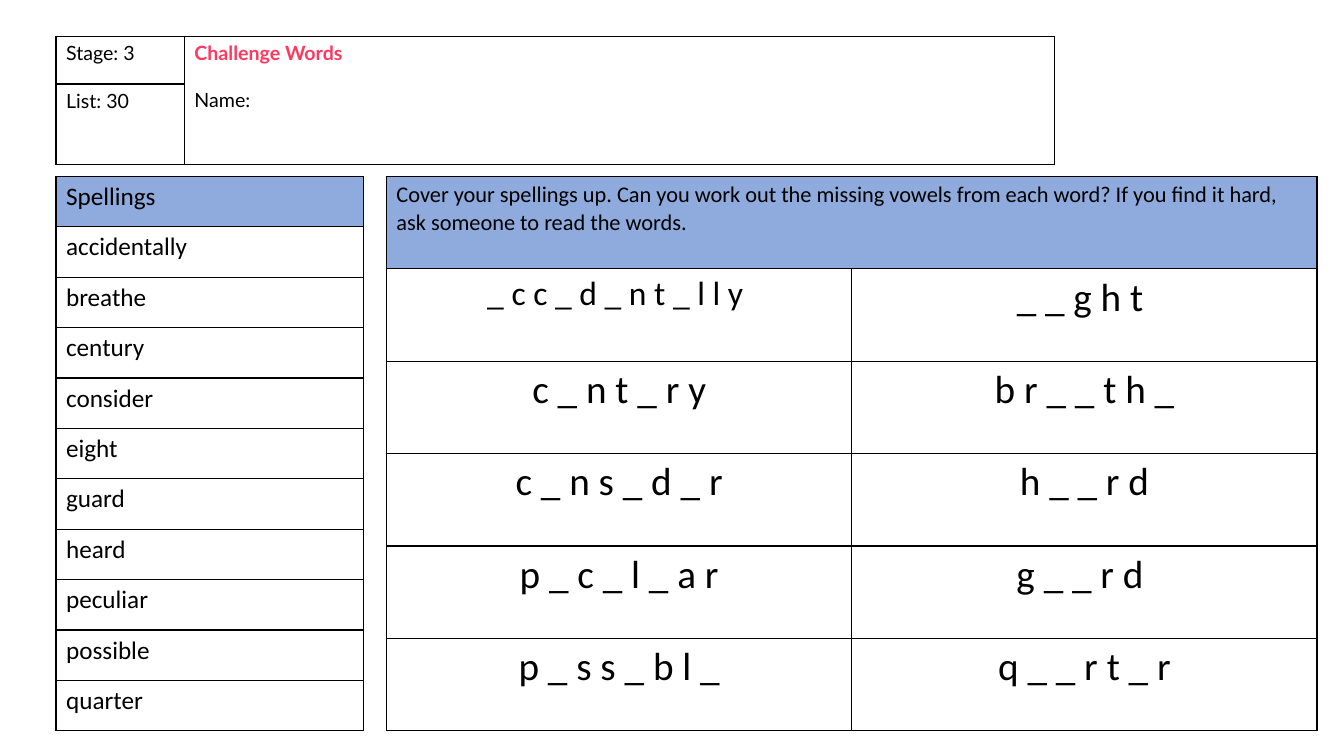
from lxml import etree
from pptx import Presentation
from pptx import util as u
from pptx.dml.color import RGBColor
from pptx.enum import text
from pptx.oxml.ns import qn

BLACK = RGBColor(0x00, 0x00, 0x00)
PINK = RGBColor(0xFF, 0x38, 0x60)
BLUE = RGBColor(0x8F, 0xAA, 0xDC)

WORDS = ["accidentally", "breathe", "century", "consider", "eight",
         "guard", "heard", "peculiar", "possible", "quarter"]
GAPS = [
    ("_ c c _ d _ n t _ l l y ", "_ _ g h t "),
    ("c _ n t _ r y", "b r _ _ t h _"),
    ("c _ n s _ d _ r", "h _ _ r d"),
    ("p _ c _ l _ a r", "g _ _ r d "),
    ("p _ s s _ b l _", "q _ _ r t _ r"),
]


class Sheet:
    def __init__(self, slide, font="Calibri", line=1):
        self.slide = slide
        self.font = font
        self.line = line

    def grid(self, left, top, cols, rows):
        """Add an unfilled table with a black line round every cell."""
        frame = self.slide.shapes.add_table(
            len(rows), len(cols), u.Pt(left), u.Pt(top),
            u.Pt(sum(cols)), u.Pt(sum(rows)))
        table = frame.table
        table.first_row = table.horz_banding = False
        for col, width in zip(table.columns, cols):
            col.width = u.Pt(width)
        for row, height in zip(table.rows, rows):
            row.height = u.Pt(height)
        for cell in table.iter_cells():
            self.edge(cell)
            cell.fill.background()
        return table

    def edge(self, cell):
        props = cell._tc.get_or_add_tcPr()
        for side in ("a:lnL", "a:lnR", "a:lnT", "a:lnB"):
            line = etree.SubElement(props, qn(side), w=str(u.Pt(self.line)))
            fill = etree.SubElement(line, qn("a:solidFill"))
            etree.SubElement(fill, qn("a:srgbClr"), val=str(BLACK))

    def label(self, cell, words, size, color=BLACK, bold=False,
              font=None, align=None, fill=None):
        if fill is not None:
            cell.fill.solid()
            cell.fill.fore_color.rgb = fill
        para = cell.text_frame.paragraphs[0]
        para.alignment = align
        self.run(para, words, size, color, bold, font)

    def add(self, cell, words, size, before, font=None):
        """Add one more paragraph to a cell that has text."""
        para = cell.text_frame.add_paragraph()
        para.space_before = u.Pt(before)
        self.run(para, words, size, BLACK, False, font)

    def run(self, para, words, size, color, bold, font):
        run = para.add_run()
        run.text = words
        run.font.name = font or self.font
        run.font.size = u.Pt(size)
        run.font.bold = bold
        run.font.color.rgb = color


def main():
    deck = Presentation()
    deck.slide_width, deck.slide_height = u.Pt(960), u.Pt(540)
    sheet = Sheet(deck.slides.add_slide(deck.slide_layouts[6]))
    left, top = 40, 126

    spell = sheet.grid(left, top, [219.6], [36] * (len(WORDS) + 1))
    sheet.label(spell.cell(0, 0), "Spellings", 18, fill=BLUE)
    for row, word in enumerate(WORDS, 1):
        sheet.label(spell.cell(row, 0), word, 18)

    head = sheet.grid(left, 26, [91.7, 621.3], [34, 34])
    head.cell(0, 1).merge(head.cell(1, 1))
    sheet.label(head.cell(0, 0), "Stage: 3", 14, font="Lato")
    sheet.label(head.cell(1, 0), "List: 30", 14, font="Lato")
    title = head.cell(0, 1)
    sheet.label(title, "Challenge Words", 14, PINK, True, "Lato")
    sheet.add(title, "Name:", 14, 16.8, "Lato")

    quiz = sheet.grid(276, top, [332.4] * 2, [66] * (len(GAPS) + 1))
    quiz.cell(0, 0).merge(quiz.cell(0, 1))
    sheet.label(quiz.cell(0, 0),
                "Cover your spellings up. Can you work out the missing vowels "
                "from each word? If you find it hard, ask someone to read the "
                "words.", 16, fill=BLUE)
    for row, pair in enumerate(GAPS, 1):
        for col, word in enumerate(pair):
            size = 24 if (row, col) == (1, 0) else 28
            sheet.label(quiz.cell(row, col), word, size,
                        align=text.PP_ALIGN.CENTER)

    deck.save("out.pptx")


if __name__ == "__main__":
    main()
